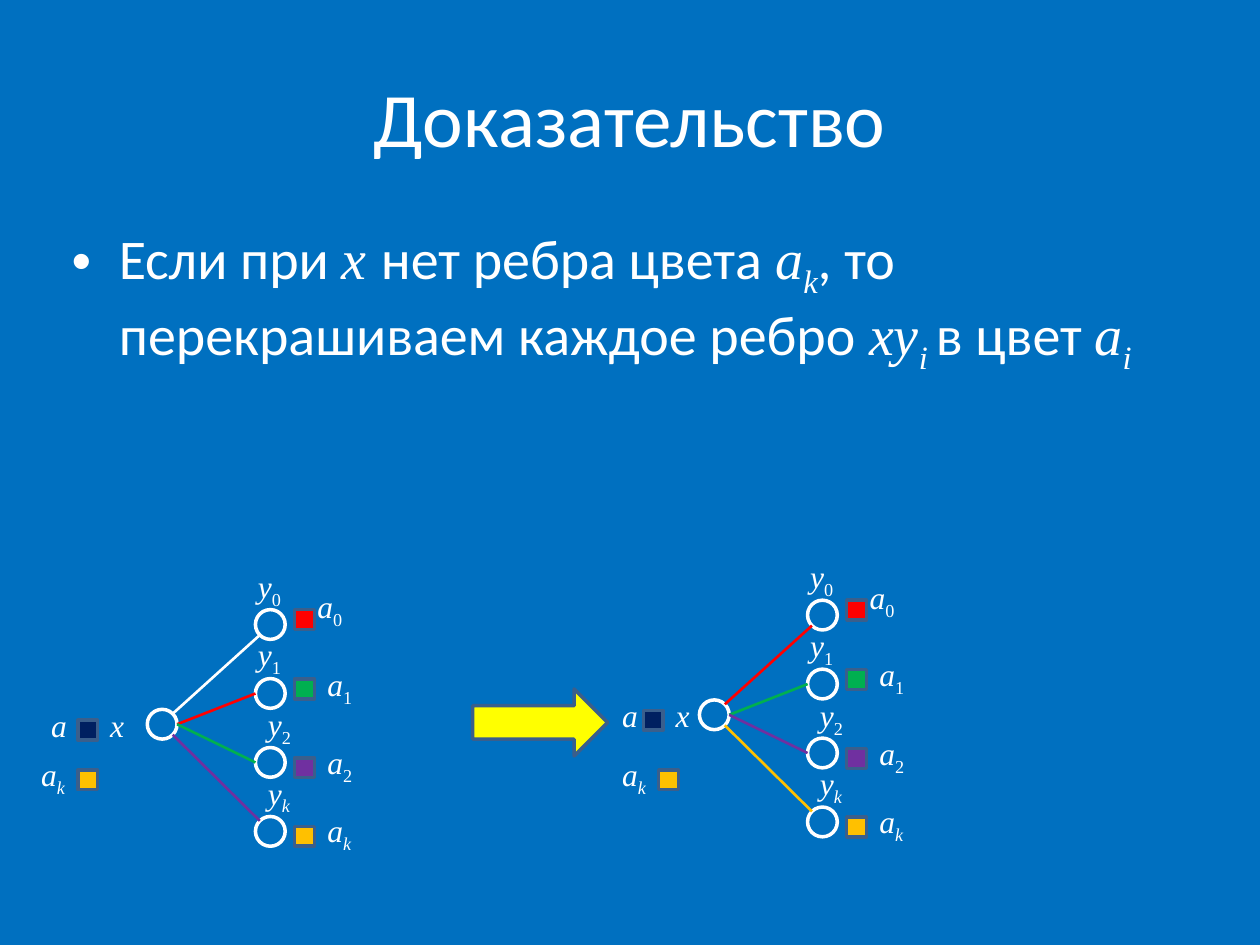
from dataclasses import dataclass
from math import sqrt

from lxml.etree import SubElement
from pptx import Presentation
from pptx.dml.color import RGBColor
from pptx.enum.shapes import MSO_CONNECTOR, MSO_SHAPE
from pptx.enum.text import MSO_ANCHOR, MSO_AUTO_SIZE, PP_ALIGN
from pptx.oxml.ns import qn
from pptx.util import Cm, Pt


@dataclass(frozen=True)
class Theme:
    background: str = "0070C0"
    text: str = "FFFFFF"
    outline: str = "3A5F8C"
    arrow: str = "FFFF00"
    white: str = "FFFFFF"
    navy: str = "002060"
    red: str = "FF0000"
    green: str = "00B050"
    purple: str = "7030A0"
    orange: str = "FFC000"
    text_font: str = "Calibri"
    math_font: str = "Times New Roman"
    title_size: int = 44
    body_size: int = 32
    label_size: int = 18
    outline_width: float = 2
    edge_width: float = 1.5


THEME = Theme()
NODE = 0.6
SWATCH = 0.4
LEAF_COLOURS = (THEME.red, THEME.green, THEME.purple, THEME.orange)
INDICES = ("0", "1", "2", "k")


def add_run(paragraph, text, size, math=False, subscript=False):
    """Letters in formulas are italic, digits upright."""
    run = paragraph.add_run()
    run.text = text
    font = run.font
    font.size = Pt(size)
    font.name = THEME.math_font if math else THEME.text_font
    font.italic = math and not text.isdigit()
    font.color.rgb = RGBColor.from_string(THEME.text)
    if subscript:
        run._r.get_or_add_rPr().set("baseline", "-25000")


def add_label(slide, left, top, letter, index="", width=1.2):
    box = slide.shapes.add_textbox(Cm(left), Cm(top), Cm(width), Cm(1.02))
    frame = box.text_frame
    frame.word_wrap = True
    frame.auto_size = MSO_AUTO_SIZE.SHAPE_TO_FIT_TEXT
    paragraph = frame.paragraphs[0]
    add_run(paragraph, letter, THEME.label_size, math=True)
    if index:
        add_run(paragraph, index, THEME.label_size, math=True, subscript=True)


def add_figure(slide, preset, left, top, width, height, fill, line=THEME.outline):
    figure = slide.shapes.add_shape(preset, Cm(left), Cm(top), Cm(width), Cm(height))
    figure.shadow.inherit = False
    figure.fill.solid()
    figure.fill.fore_color.rgb = RGBColor.from_string(fill)
    figure.line.color.rgb = RGBColor.from_string(line)
    figure.line.width = Pt(THEME.outline_width)


def add_node(slide, left, top):
    add_figure(slide, MSO_SHAPE.OVAL, left, top, NODE, NODE,
               THEME.background, THEME.white)


def add_swatch(slide, left, top, colour):
    add_figure(slide, MSO_SHAPE.RECTANGLE, left, top, SWATCH, SWATCH, colour)


def add_edge(slide, hub, leaf, slope, colour):
    """Join two node boxes at their rims; slope is -1 up, 0 sideways, 1 down."""
    radius = NODE / 2
    reach = radius / sqrt(2) if slope else radius
    rise = slope * reach
    edge = slide.shapes.add_connector(
        MSO_CONNECTOR.STRAIGHT,
        Cm(hub[0] + radius + reach), Cm(hub[1] + radius + rise),
        Cm(leaf[0] + radius - reach), Cm(leaf[1] + radius - rise))
    edge.line.color.rgb = RGBColor.from_string(colour)
    edge.line.width = Pt(THEME.edge_width)
    SubElement(edge._element.spPr, qn("a:effectLst"))


def place_title(slide, left, top, width, height):
    title = slide.shapes.title
    title.left, title.top, title.width, title.height = map(Cm, (left, top, width, height))
    title.text_frame.vertical_anchor = MSO_ANCHOR.MIDDLE
    paragraph = title.text_frame.paragraphs[0]
    paragraph.alignment = PP_ALIGN.CENTER
    add_run(paragraph, "Доказательство", THEME.title_size)


def place_statement(slide, left, top, width, height):
    statement = slide.placeholders[1]
    statement.left, statement.top, statement.width, statement.height = map(
        Cm, (left, top, width, height))
    paragraph = statement.text_frame.paragraphs[0]
    for text, math, subscript in (
        ("Если при ", False, False),
        ("x ", True, False),
        ("нет ребра цвета ", False, False),
        ("a", True, False),
        ("k", True, True),
        (", то перекрашиваем каждое ребро ", False, False),
        ("xy", True, False),
        ("i ", True, True),
        ("в цвет ", False, False),
        ("a", True, False),
        ("i", True, True),
    ):
        add_run(paragraph, text, THEME.body_size, math, subscript)


def place_star(slide, left, top, edge_colours):
    """Vertex x joined to y0..yk, each with its missing colour beside it."""
    hub = (left, top + 3)
    leaves = [(left + 2.18, top + 0.99 + 1.39 * i) for i in range(4)]
    add_node(slide, *hub)
    for leaf, slope, colour in zip(leaves, (-1, 0, 0, 1), edge_colours):
        add_node(slide, *leaf)
        add_edge(slide, hub, leaf, slope, colour)

    vertex_labels = ((1.98, 0), (1.98, 1.38), (2.18, 2.79), (2.18, 4.17))
    colour_labels = ((3.18, 0.41), (3.38, 1.98), (3.38, 3.56), (3.38, 4.93))
    swatch_tops = (0.99, 2.39, 3.98, 5.36)
    for index, vertex, label, swatch_top, colour in zip(
            INDICES, vertex_labels, colour_labels, swatch_tops, LEAF_COLOURS):
        add_label(slide, left + vertex[0], top + vertex[1], "y", index)
        add_swatch(slide, left + 2.97, top + swatch_top, colour)
        add_label(slide, left + label[0], top + label[1], "a", index)


def place_hub_colours(slide, left, top, row_gap, a_shift, a_swatch, k_swatch):
    """Colours a and ak missing at x; shifts are measured from the left edge."""
    add_label(slide, left + a_shift, top, "a")
    add_swatch(slide, left + a_swatch, top + 0.42, THEME.navy)
    add_label(slide, left + a_swatch + SWATCH, top, "x", width=0.71)
    add_label(slide, left, top + row_gap, "a", "k")
    add_swatch(slide, left + k_swatch, top + row_gap + 0.43, THEME.orange)


def main():
    presentation = Presentation()
    presentation.slide_width, presentation.slide_height = Cm(25.4), Cm(19.05)
    slide = presentation.slides.add_slide(presentation.slide_layouts[1])
    slide.background.fill.solid()
    slide.background.fill.fore_color.rgb = RGBColor.from_string(THEME.background)

    place_title(slide, 1.27, 0.76, 22.86, 3.18)
    place_statement(slide, 1.19, 4.37, 22.86, 7.26)

    place_star(slide, 2.97, 11.3, (THEME.white, *LEAF_COLOURS[:3]))
    place_hub_colours(slide, 0.58, 14.1, 0.99, a_shift=0.2, a_swatch=0.99, k_swatch=0.99)

    add_figure(slide, MSO_SHAPE.RIGHT_ARROW, 9.53, 13.89, 2.72, 1.35, THEME.arrow)

    place_star(slide, 14.1, 11.11, LEAF_COLOURS)
    place_hub_colours(slide, 12.29, 13.9, 1.19, a_shift=0, a_swatch=0.68, k_swatch=0.99)

    presentation.save("out.pptx")


if __name__ == "__main__":
    main()
